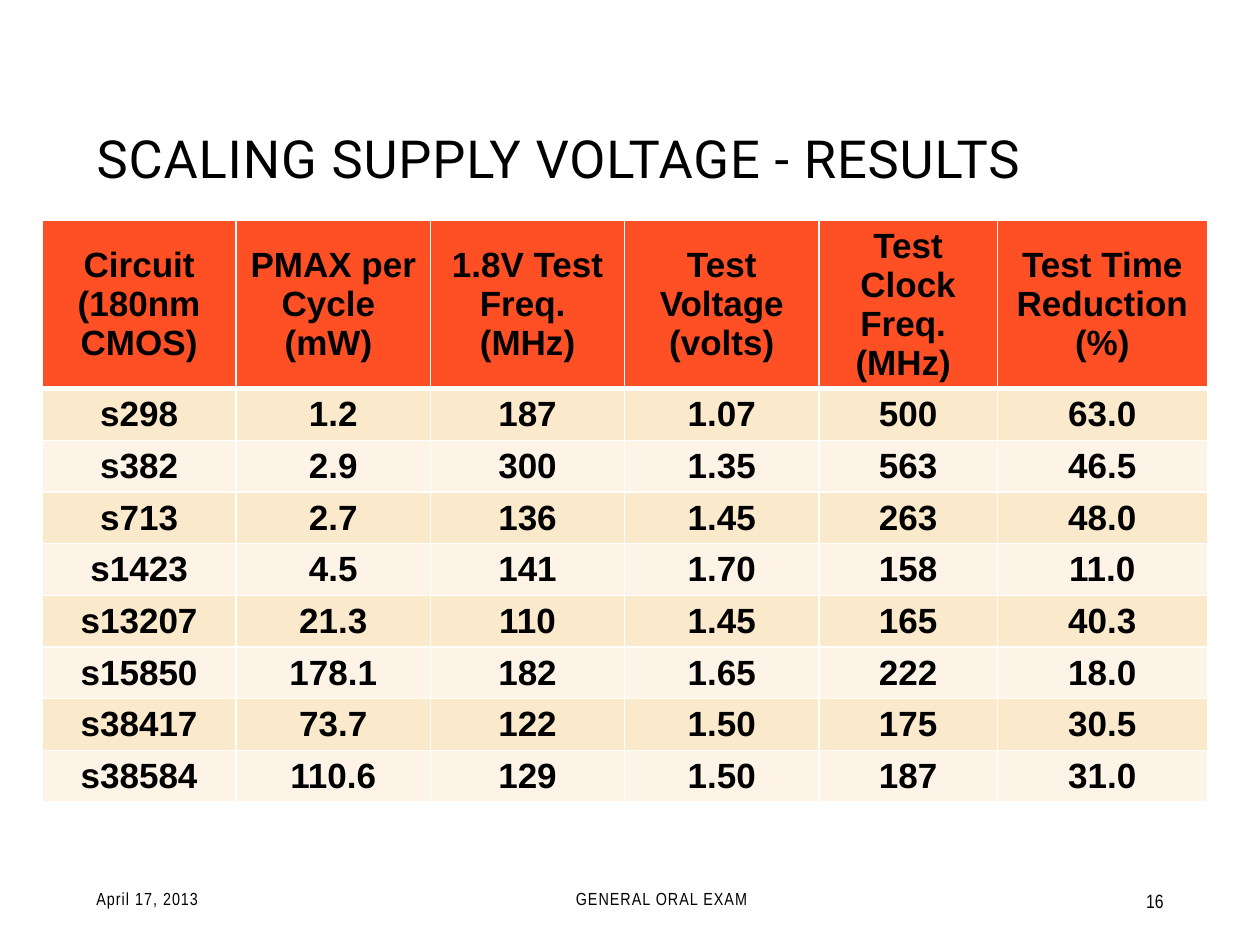
from lxml.etree import SubElement
from pptx import Presentation
from pptx.dml.color import RGBColor
from pptx.enum.text import MSO_ANCHOR as Anchor, MSO_AUTO_SIZE as Fit, PP_ALIGN as Align
from pptx.oxml.ns import qn
from pptx.util import Pt

TITLE = "SCALING SUPPLY VOLTAGE - RESULTS"
HEAD = [
    "Circuit (180nm CMOS)",
    "PMAX per Cycle \n(mW) ",
    "1.8V Test Freq. \n(MHz)",
    "Test Voltage (volts)",
    "Test Clock Freq. \n(MHz) ",
    "Test Time Reduction (%)",
]
ROWS = [
    ("s298", "1.2", "187", "1.07", "500", "63.0"),
    ("s382", "2.9", "300", "1.35", "563", "46.5"),
    ("s713", "2.7", "136", "1.45", "263", "48.0"),
    ("s1423", "4.5", "141", "1.70", "158", "11.0"),
    ("s13207", "21.3", "110", "1.45", "165", "40.3"),
    ("s15850", "178.1", "182", "1.65", "222", "18.0"),
    ("s38417", "73.7", "122", "1.50", "175", "30.5"),
    ("s38584", "110.6", "129", "1.50", "187", "31.0"),
]
# text, left, top, width, alignment, size, letter spacing
FOOT = [
    ("April 17, 2013", 48, 499, 120, Align.LEFT, "foot", 0.6),
    ("GENERAL ORAL EXAM", 264, 499, 228, Align.CENTER, "foot", 0.6),
    ("16", 594, 500.4, 78, Align.RIGHT, "page", 0),
]
THEME = {
    "ink": "000000", "head": "FF4F25", "bands": ("FBE9CC", "FDF4E7"), "rule": "FFFFFF",
    "title": ("Roboto", 30), "foot": ("Arial Narrow", 10),
    "page": ("Arial Narrow", 11), "cell": ("Arial", 20),
}
COLS = [111, 111, 111, 111, 102, 120]
HEAD_H, ROW_H = 96.2, 29.52


def style(frame, kind, align, bold=False, gap=0):
    """Format every run; gap is the letter spacing in points."""
    face, size = THEME[kind]
    for para in frame.paragraphs:
        para.alignment = align
        for run in para.runs:
            font = run.font
            font.name, font.size, font.bold = face, Pt(size), bold
            font.color.rgb = RGBColor.from_string(THEME["ink"])
            if gap:
                font._element.set("spc", str(int(gap * 100)))


def place(shape, left, top, width, height):
    shape.left, shape.top = Pt(left), Pt(top)
    shape.width, shape.height = Pt(width), Pt(height)


def rule(cell, **widths):
    """Draw cell borders, keyed by side: L, R, T, B."""
    props = cell._tc.get_or_add_tcPr()
    for side, width in widths.items():
        line = SubElement(props, qn("a:ln" + side), w=str(Pt(width)))
        fill = SubElement(line, qn("a:solidFill"))
        SubElement(fill, qn("a:srgbClr"), val=THEME["rule"])


def add_title(slide):
    title = slide.shapes.title
    place(title, 48, 21.6, 624, 90)
    frame = title.text_frame
    frame.text = TITLE
    frame.word_wrap, frame.auto_size = True, Fit.NONE
    frame.vertical_anchor = Anchor.BOTTOM
    style(frame, "title", Align.LEFT, gap=0.5)


def add_foot(slide):
    for text, left, top, width, align, kind, gap in FOOT:
        box = slide.shapes.add_textbox(Pt(left), Pt(top), Pt(width), Pt(28.8))
        frame = box.text_frame
        frame.text = text
        frame.word_wrap = True
        frame.vertical_anchor = Anchor.MIDDLE
        style(frame, kind, align, gap=gap)


def add_grid(slide):
    data = [HEAD, *ROWS]
    high = HEAD_H + ROW_H * len(ROWS)
    grid = slide.shapes.add_table(
        len(data), len(COLS), Pt(24), Pt(126), Pt(sum(COLS)), Pt(high)).table
    for col, width in zip(grid.columns, COLS):
        col.width = Pt(width)
    for r, values in enumerate(data):
        grid.rows[r].height = Pt(ROW_H if r else HEAD_H)
        tint = THEME["bands"][(r - 1) % 2] if r else THEME["head"]
        for c, text in enumerate(values):
            cell = grid.cell(r, c)
            cell.text_frame.text = text
            cell.vertical_anchor = Anchor.MIDDLE
            cell.margin_top = cell.margin_bottom = Pt(0)
            rule(cell, L=1, R=1, T=3 if r == 1 else 1, B=1 if r else 3)
            cell.fill.solid()
            cell.fill.fore_color.rgb = RGBColor.from_string(tint)
            style(cell.text_frame, "cell", Align.CENTER, bold=True)


def main():
    deck = Presentation()
    deck.slide_width, deck.slide_height = Pt(720), Pt(540)
    slide = deck.slides.add_slide(deck.slide_layouts[5])
    add_title(slide)
    add_foot(slide)
    add_grid(slide)
    deck.save("out.pptx")


if __name__ == "__main__":
    main()
